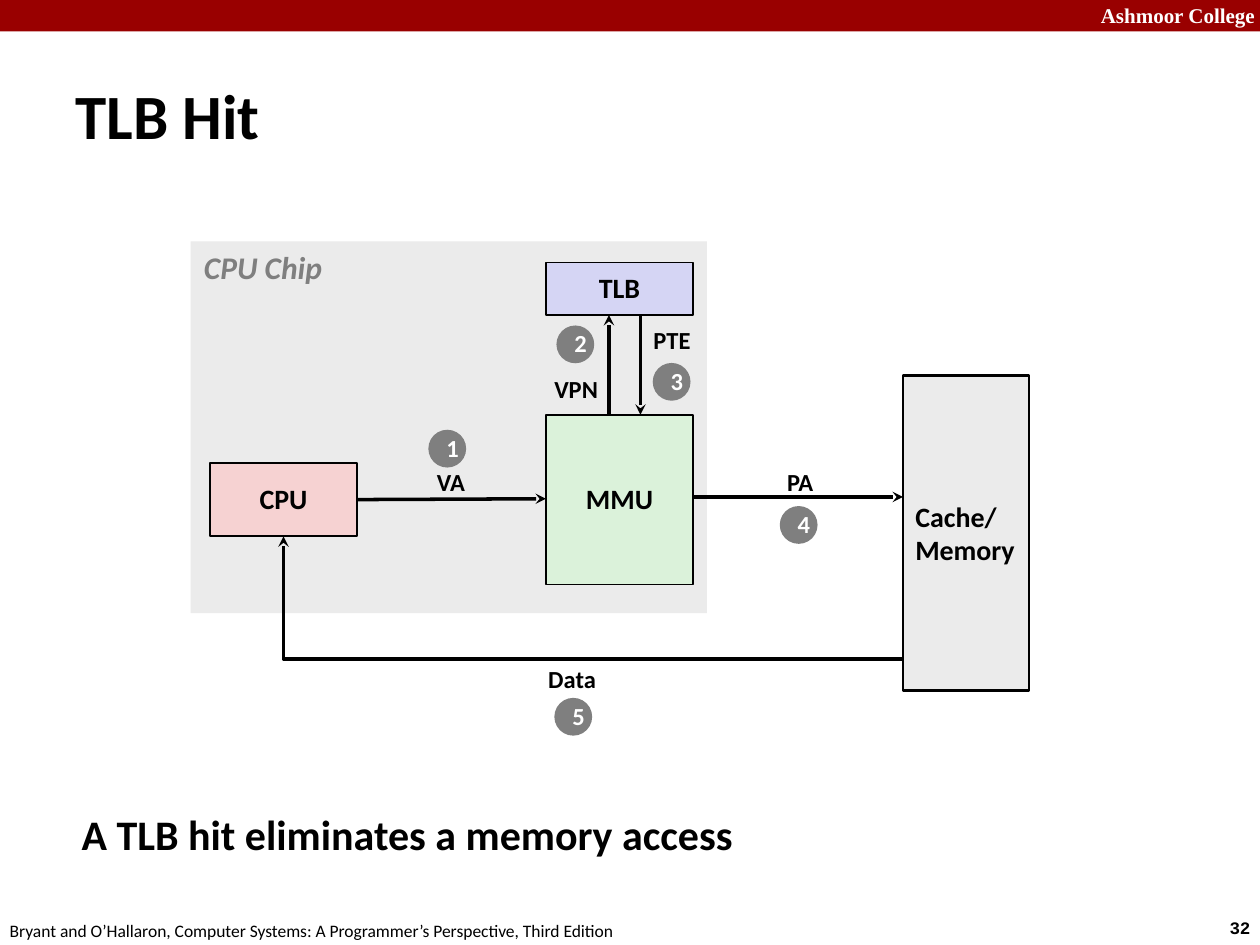
"""Build the TLB Hit slide: a CPU chip diagram with five numbered steps."""
from dataclasses import dataclass

from lxml import etree
from pptx import Presentation
from pptx.dml.color import RGBColor
from pptx.enum.shapes import MSO_CONNECTOR as Link, MSO_SHAPE as Shape
from pptx.enum.text import MSO_ANCHOR as Anchor, MSO_AUTO_SIZE as Fit, PP_ALIGN as Align
from pptx.oxml.ns import qn
from pptx.util import Pt


@dataclass(frozen=True)
class Theme:
    black: str = "000000"
    white: str = "FFFFFF"
    banner: str = "990000"
    panel: str = "EBEBEB"
    mmu: str = "DBF2DA"
    cpu: str = "F6D2D2"
    tlb: str = "D5D5F4"
    gray: str = "7F7F7F"
    sans: str = "Calibri"
    serif: str = "Times New Roman"
    mono: str = "Courier New"
    title: int = 36
    takeaway: int = 24
    chip: int = 18
    unit: int = 16
    step: int = 14
    brand: int = 12
    footer: int = 10


theme = Theme()


def write(holder, text, size, color=theme.black, font=theme.sans, bold=True,
          italic=False, align=Align.LEFT, anchor=Anchor.TOP, spacing=1.0, wrap=True):
    frame = holder.text_frame
    frame.auto_size, frame.word_wrap, frame.vertical_anchor = Fit.NONE, wrap, anchor
    for index, line in enumerate(text.split("\n")):
        paragraph = frame.add_paragraph() if index else frame.paragraphs[0]
        paragraph.alignment, paragraph.line_spacing = align, spacing
        run = paragraph.add_run()
        run.text = line
        run.font.name, run.font.size = font, Pt(size)
        run.font.bold, run.font.italic = bold, italic
        run.font.color.rgb = RGBColor.from_string(color)


def block(kind, bounds, fill, outline=0):
    part = slide.shapes.add_shape(kind, *map(Pt, bounds))
    part.shadow.inherit = False
    part.fill.solid()
    part.fill.fore_color.rgb = RGBColor.from_string(fill)
    if outline:
        part.line.color.rgb = RGBColor.from_string(theme.black)
        part.line.width = Pt(outline)
    else:
        part.line.fill.background()
    return part


deck = Presentation()
deck.slide_width, deck.slide_height = Pt(720), Pt(540)
slide = deck.slides.add_slide(deck.slide_layouts[5])

block(Shape.RECTANGLE, (0, 0, 720, 18), theme.banner)
block(Shape.RECTANGLE, (109, 138, 295, 212.4), theme.panel)

heading = slide.shapes.title
heading.left, heading.top, heading.width, heading.height = map(Pt, (36, 34.5, 686, 62))
write(heading, "TLB Hit", theme.title, anchor=Anchor.MIDDLE)

captions = [
    ((622, -2, 103, 21.6), "Ashmoor College",
     dict(size=theme.brand, color=theme.white, font=theme.serif)),
    ((695.5, 520.5, 32.5, 19.5), "32", dict(size=theme.footer, font=theme.mono)),
    ((-1.5, 522, 366, 19.5),
     "Bryant and O’Hallaron, Computer Systems: A Programmer’s Perspective, Third Edition",
     dict(size=theme.footer, bold=False)),
    ((109.5, 138, 83.5, 29), "CPU Chip",
     dict(size=theme.chip, color=theme.gray, italic=True)),
    ((39.6, 458.6, 566, 45.4), "A TLB hit eliminates a memory access",
     dict(size=theme.takeaway)),
]
for bounds, text, style in captions:
    caption = slide.shapes.add_textbox(*map(Pt, bounds))
    write(caption, text, wrap=False, **style)

centered = dict(align=Align.CENTER, anchor=Anchor.MIDDLE, spacing=0.98)
units = [
    ("MMU", (312, 237, 84, 97), theme.mmu),
    ("CPU", (120, 264.5, 84, 42), theme.cpu),
    ("TLB", (312, 150, 84, 30), theme.tlb),
]
for name, bounds, fill in units:
    write(block(Shape.RECTANGLE, bounds, fill, 1), name, theme.unit, **centered)
memory = block(Shape.RECTANGLE, (516, 214.5, 72, 180), theme.panel, 1.5)
write(memory, "Cache/\nMemory", theme.unit, anchor=Anchor.MIDDLE)

steps = [
    ("VA", (240.5, 264, 34.5), (244.8, 245.6), (204, 285.5, 312, 285)),
    ("VPN", (309.5, 210.5, 39.5), (318, 186), (348, 237, 348, 180)),
    ("PTE", (366, 182.5, 36), (373, 207.4), (366, 180, 366, 237)),
    ("PA", (441.4, 264, 31.6), (445.6, 289.2), (396, 284, 516, 284)),
    ("Data", (306, 376.6, 41.8), (316.8, 398.8), (162, 306.5, 516, 376.5)),
]
for number, (signal, (left, top, width), corner, route) in enumerate(steps, 1):
    arrow = slide.shapes.add_connector(Link.STRAIGHT, *map(Pt, route))
    arrow.line.color.rgb = RGBColor.from_string(theme.black)
    arrow.line.width = Pt(2)
    properties = arrow._element.spPr
    etree.SubElement(properties.find(qn("a:ln")), qn("a:tailEnd"), type="stealth")
    etree.SubElement(properties, qn("a:effectLst"))
    if signal == "Data":
        properties.find(qn("a:prstGeom")).set("prst", "bentConnector2")
        properties.find(qn("a:xfrm")).set("rot", "10800000")

    label = slide.shapes.add_textbox(Pt(left), Pt(top), Pt(width), Pt(24))
    write(label, signal, theme.step, wrap=False, **centered)
    badge = block(Shape.OVAL, (*corner, 21.6, 21.6), theme.gray)
    write(badge, str(number), theme.step, theme.white, **centered)

deck.save("out.pptx")
